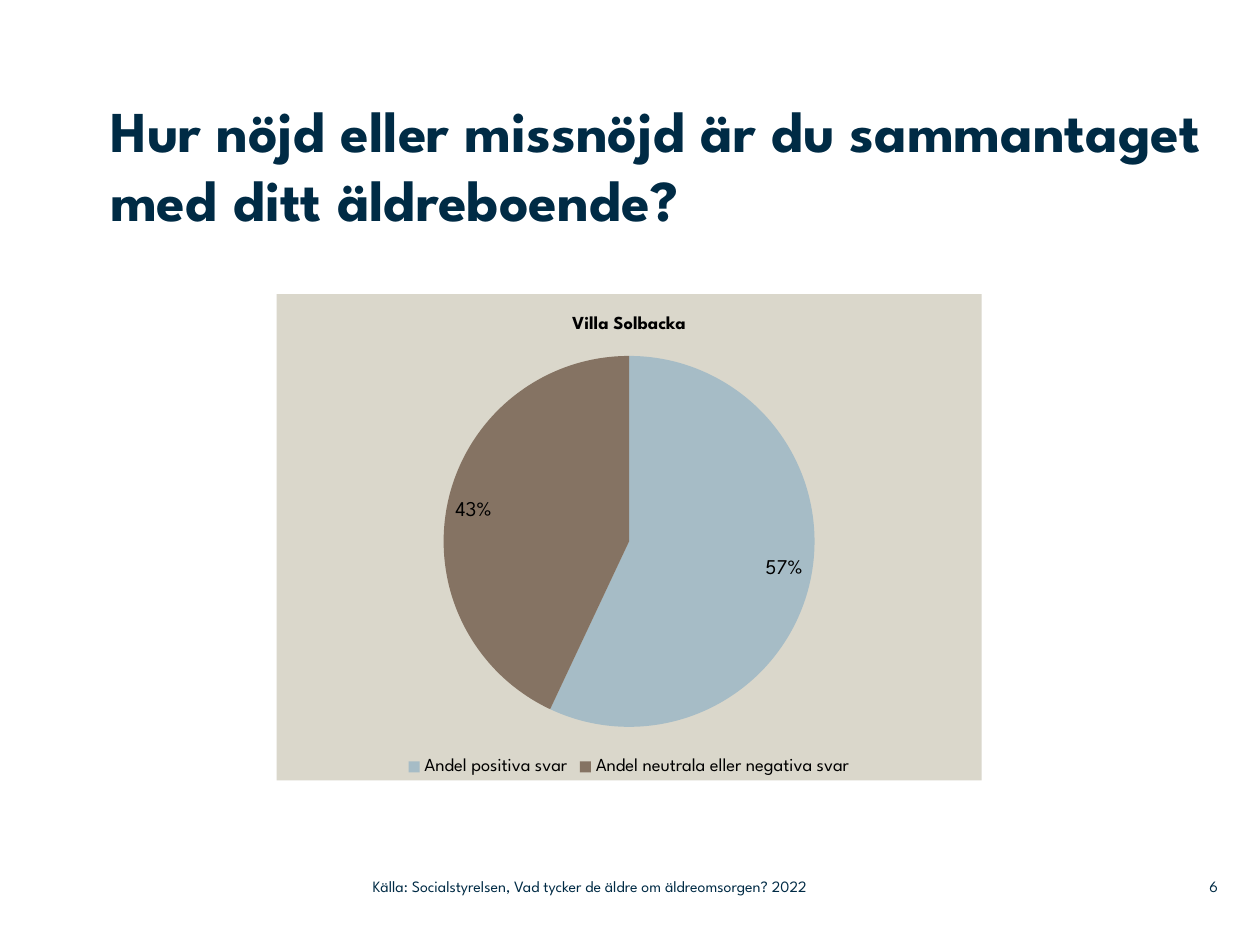
from lxml.etree import SubElement
from pptx import Presentation
from pptx.chart.data import CategoryChartData
from pptx.dml.color import RGBColor
from pptx.enum.chart import XL_CHART_TYPE, XL_LABEL_POSITION, XL_LEGEND_POSITION
from pptx.enum.text import MSO_ANCHOR, PP_ALIGN
from pptx.oxml.ns import qn
from pptx.util import Pt

FONT = "League Spartan"
NAVY, BLACK, SAND = "002B45", "000000", "DAD7CB"
SLICES = {
    "Andel positiva svar": (57, "A6BCC6"),
    "Andel neutrala eller negativa svar": (43, "857363"),
}


def paint(fill, color):
    """Give a fill one solid hex colour."""
    fill.solid()
    fill.fore_color.rgb = RGBColor.from_string(color)


def style(font, size, color=BLACK, bold=False):
    """Set typeface, size, colour and weight of a font."""
    font.name, font.size, font.bold = FONT, Pt(size), bold
    paint(font.fill, color)


def add_text(s, box, text, size, bold=False, anchor=MSO_ANCHOR.MIDDLE, align=PP_ALIGN.LEFT):
    """Place a navy text without margins in the box."""
    tf = s.shapes.add_textbox(*map(Pt, box)).text_frame
    tf.word_wrap = True
    tf.vertical_anchor = anchor
    tf.margin_left = tf.margin_right = tf.margin_top = tf.margin_bottom = 0
    tf.text = text
    p = tf.paragraphs[0]
    p.alignment = align
    style(p.runs[0].font, size, NAVY, bold)


def add_pie(s, box, title):
    """Place the pie chart of answers on a sand panel in the box."""
    data = CategoryChartData()
    data.categories = list(SLICES)
    data.add_series("Series 1", [value for value, _ in SLICES.values()])
    chart = s.shapes.add_chart(XL_CHART_TYPE.PIE, *map(Pt, box), data).chart
    style(chart.font, 18)

    chart.has_title = True
    tf = chart.chart_title.text_frame
    tf.text = title
    style(tf.paragraphs[0].runs[0].font, 10.5, bold=True)

    chart.has_legend = True
    chart.legend.position = XL_LEGEND_POSITION.BOTTOM
    chart.legend.include_in_layout = False
    style(chart.legend.font, 10.5)

    plot = chart.plots[0]
    plot.vary_by_categories = True
    for i, (_, color) in enumerate(SLICES.values()):
        paint(plot.series[0].points[i].format.fill, color)
    labels = plot.series[0].data_labels
    labels.show_percentage, labels.show_value = True, False
    labels.number_format, labels.number_format_is_linked = "0%", False
    labels.position = XL_LABEL_POSITION.INSIDE_END
    style(labels.font, 12)

    panel = chart.element.find(qn("c:chart"))
    props = panel.makeelement(qn("c:spPr"))
    paper = SubElement(props, qn("a:solidFill"))
    SubElement(paper, qn("a:srgbClr"), val=SAND)
    SubElement(SubElement(props, qn("a:ln")), qn("a:noFill"))
    panel.addnext(props)


def add_footer(s, box, source, number):
    """Place the source and the page number in the footer box."""
    left, top, width, height = box
    number_width = 34
    add_text(s, (left, top, 319, height), source, 9)
    add_text(s, (left + width - number_width, top, number_width, height), number, 9,
             align=PP_ALIGN.RIGHT)


def main():
    """Build and save the slide."""
    prs = Presentation()
    prs.slide_width, prs.slide_height = Pt(720), Pt(540)
    s = prs.slides.add_slide(prs.slide_layouts[6])
    add_text(s, (63, 54, 636, 102), "Hur nöjd eller missnöjd är du sammantaget med ditt äldreboende?",
             33, bold=True, anchor=MSO_ANCHOR.TOP)
    add_pie(s, (158, 168, 403, 278), "Villa Solbacka")
    add_footer(s, (213, 496, 483, 21),
               "Källa: Socialstyrelsen, Vad tycker de äldre om äldreomsorgen? 2022", "6")
    prs.save("out.pptx")


if __name__ == "__main__":
    main()
